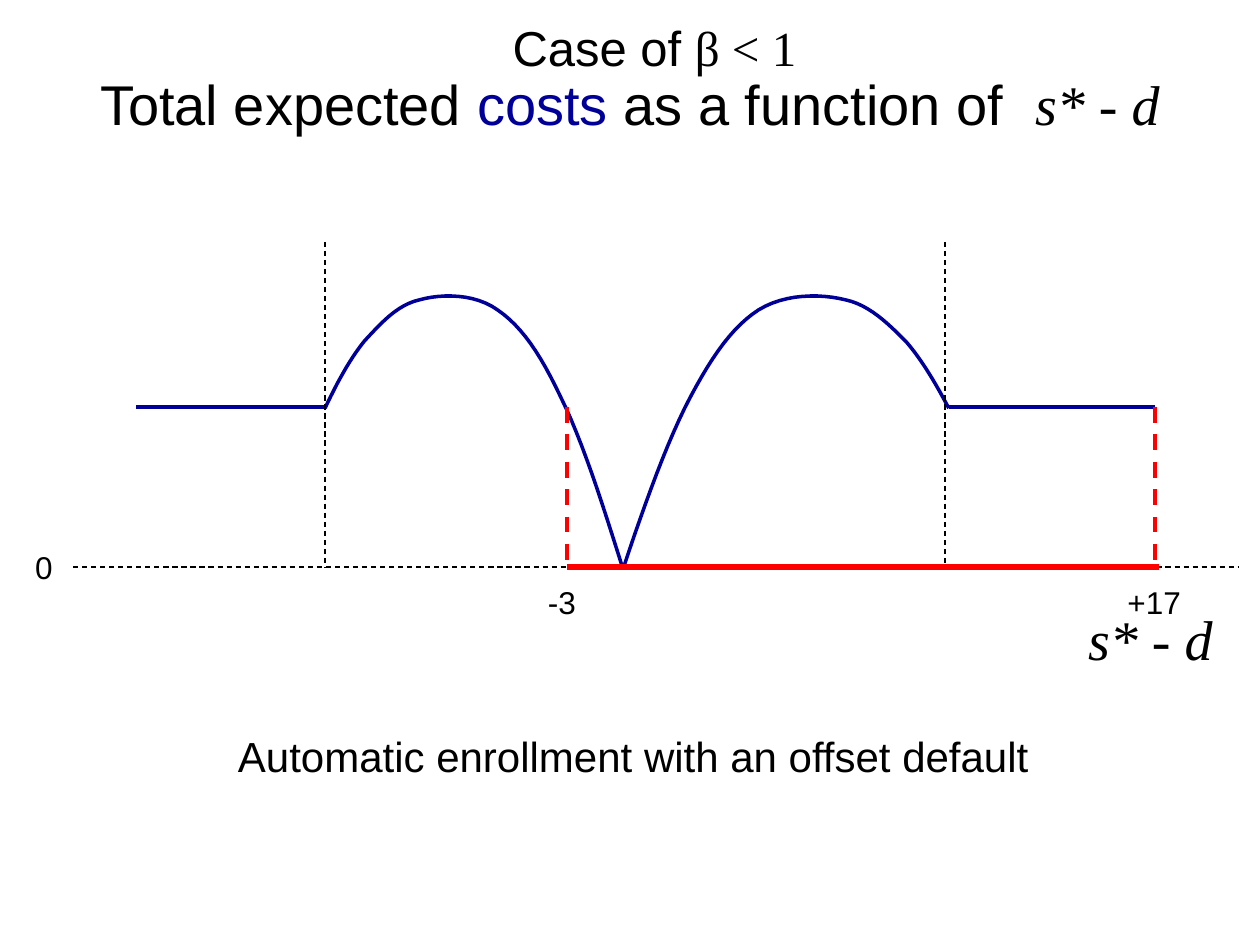
from pptx import Presentation
from pptx import util as u
from pptx.dml.color import RGBColor
from pptx.enum import dml, shapes, text
from pptx.oxml.ns import qn
from lxml import etree

W, H = 10, 7.5
BLACK, BLUE, RED = "000000", "000099", "FF0000"
SANS, SERIF = "Arial", "Times New Roman"
TOP, LEVEL, ZERO = 1.92, 3.23, 4.5
LOW, MINUS3, HIGH, PLUS17 = 2.58, 4.5, 7.5, 9.17

TITLE = [("Total expected ", {}), ("costs", {"color": BLUE}),
         (" as a function of  ", {}),
         ("s* - d", {"font": SERIF, "italic": True})]
LABELS = [
    ((8.42, 4.55, 1.42, 1.03), [("s* - d", {"font": SERIF, "italic": True})], 32, True),
    ((3.97, 0.09, 2.48, 0.57), [("Case of ", {}), ("β < 1", {"font": SERIF})], 28, False),
    ((0.18, 4.3, 0.34, 0.4), [("0", {})], 18, False),
    ((4.25, 4.58, 0.43, 0.4), [("-3", {})], 18, False),
    ((8.85, 4.58, 0.63, 0.4), [("+17", {})], 18, False),
    ((1.79, 5.75, 6.54, 0.5),
     [("Automatic enrollment with an offset default", {})], 24, False),
]
CURVES = [
    [(2.58, 3.24), (2.67, 3.05), (2.77, 2.86), (2.89, 2.71), (3.02, 2.57),
     (3.15, 2.42), (3.33, 2.38), (3.51, 2.33), (3.77, 2.33), (3.95, 2.46),
     (4.14, 2.59), (4.29, 2.81), (4.45, 3.15), (4.62, 3.49), (4.78, 3.99), (4.94, 4.5)],
    [(7.53, 3.24), (7.43, 3.05), (7.32, 2.86), (7.19, 2.71), (7.05, 2.57),
     (6.9, 2.42), (6.71, 2.38), (6.51, 2.33), (6.23, 2.33), (6.02, 2.46),
     (5.82, 2.59), (5.66, 2.81), (5.48, 3.15), (5.3, 3.49), (5.12, 3.99), (4.95, 4.5)],
]
LINES = [
    (0.58, ZERO, 9.83, ZERO, BLACK, 0.75, True),
    (1.08, LEVEL, LOW, LEVEL, BLUE, 2, False),
    (LOW, TOP, LOW, ZERO, BLACK, 0.75, True),
    (PLUS17, LEVEL, 7.53, LEVEL, BLUE, 2, False),
    (HIGH, TOP, HIGH, ZERO, BLACK, 0.75, True),
    (MINUS3, LEVEL, MINUS3, ZERO, RED, 2.25, True),
    (PLUS17, LEVEL, PLUS17, 4.52, RED, 2.25, True),
    (9.2, ZERO, MINUS3, ZERO, RED, 3.5, False),
]
STEPS = 12


def rgb(value):
    return RGBColor.from_string(value)


def add_run(p, content, size=18, font=SANS, color=BLACK, italic=False):
    r = p.add_run()
    r.text = content
    r.font.size = u.Pt(size)
    r.font.name = font
    r.font.italic = italic
    r.font.color.rgb = rgb(color)


def fill_text(tf, runs, size, centred):
    tf.auto_size = text.MSO_AUTO_SIZE.NONE
    tf.word_wrap = centred
    tf.vertical_anchor = text.MSO_ANCHOR.MIDDLE if centred else text.MSO_ANCHOR.TOP
    p = tf.paragraphs[0]
    p.alignment = text.PP_ALIGN.CENTER if centred else text.PP_ALIGN.LEFT
    for content, style in runs:
        add_run(p, content, size=size, **style)


def style_line(line, color, width, dashed=False):
    line.color.rgb = rgb(color)
    line.width = u.Pt(width)
    if dashed:
        line.dash_style = dml.MSO_LINE.DASH


def add_line(s, x1, y1, x2, y2, color, width, dashed):
    ends = [u.Inches(v) for v in (x1, y1, x2, y2)]
    sp = s.shapes.add_connector(shapes.MSO_CONNECTOR.STRAIGHT, *ends)
    style_line(sp.line, color, width, dashed)
    etree.SubElement(sp._element.spPr, qn("a:effectLst"))


def bezier(a, b, c, d, t):
    return tuple((1 - t) ** 3 * i + 3 * (1 - t) ** 2 * t * j
                 + 3 * (1 - t) * t ** 2 * k + t ** 3 * m
                 for i, j, k, m in zip(a, b, c, d))


def add_curve(s, inches):
    pts = [(u.Inches(x), u.Inches(y)) for x, y in inches]
    dots = [bezier(*pts[i:i + 4], n / STEPS)
            for i in range(0, len(pts) - 1, 3) for n in range(1, STEPS + 1)]
    fb = s.shapes.build_freeform(*pts[0])
    fb.add_line_segments(dots, close=False)
    sp = fb.convert_to_shape()
    sp.fill.background()
    sp.shadow.inherit = False
    style_line(sp.line, BLUE, 2)


def main():
    prs = Presentation()
    prs.slide_width, prs.slide_height = u.Inches(W), u.Inches(H)
    s = prs.slides.add_slide(prs.slide_layouts[5])
    title = s.shapes.title
    title.left, title.top = u.Inches(0.5), u.Inches(0.3)
    title.width, title.height = u.Inches(9), u.Inches(1.03)
    fill_text(title.text_frame, TITLE, 32, True)
    for pts in CURVES:
        add_curve(s, pts)
    for line in LINES:
        add_line(s, *line)
    for box, runs, size, centred in LABELS:
        sp = s.shapes.add_textbox(*[u.Inches(v) for v in box])
        fill_text(sp.text_frame, runs, size, centred)
    prs.save("out.pptx")


if __name__ == "__main__":
    main()
